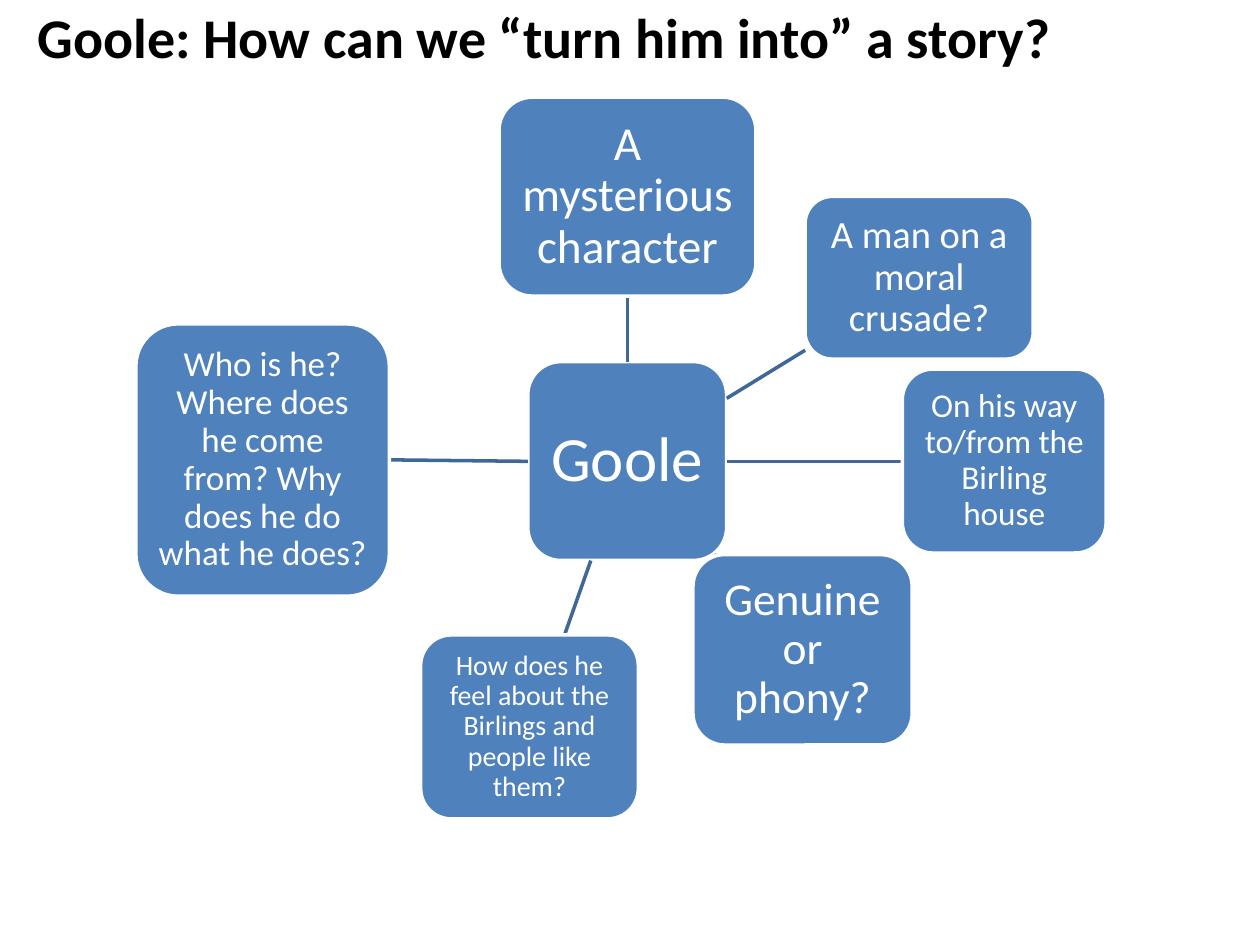
import dataclasses

import pptx
import pptx.dml.color
import pptx.enum.shapes
import pptx.enum.text
import pptx.oxml.ns
import pptx.util
from lxml import etree

Cm = pptx.util.Cm
Pt = pptx.util.Pt


@dataclasses.dataclass(frozen=True)
class Theme:
    font: str = "Calibri"
    ink: str = "000000"
    paper: str = "FFFFFF"
    node: str = "4F81BD"
    link: str = "3F6797"
    line_width: float = 2
    title_size: float = 32
    hub_size: float = 36


THEME = Theme()

TITLE = "Goole: How can we “turn him into” a story?"

# left, top, width, height in centimetres
HUB = ("Goole", (10.64, 7.29, 4.01, 4.01), THEME.hub_size, 0.25)

# text, place, type size, inset, link from the hub to the idea
IDEAS = [
    ("A mysterious character", (10.06, 1.96, 5.18, 4.01), 27, 0.18,
     (12.65, 7.29, 12.65, 5.94)),
    ("A man on a moral crusade?", (16.23, 3.96, 4.6, 3.28), 22, 0.15,
     (14.65, 8.03, 16.23, 7.06)),
    ("Genuine or phony?", (13.97, 11.18, 4.42, 3.84), 26, 0.18,
     (14.53, 11.3, 14.4, 11.18)),
    ("How does he feel about the Birlings and people like them?",
     (8.48, 12.8, 4.39, 3.71), 16, 0.1, (11.91, 11.3, 11.38, 12.8)),
    ("Who is he? Where does he come from? Why does he do what he does?",
     (2.74, 6.53, 5.11, 5.49), 20, 0.15, (10.64, 9.3, 7.85, 9.27)),
    ("On his way to/from the Birling house", (18.19, 7.44, 4.11, 3.71), 19, 0.13,
     (14.65, 9.3, 18.19, 9.3)),
]


def colour(value):
    return pptx.dml.color.RGBColor.from_string(value)


def lengths(values):
    return [Cm(value) for value in values]


def style_line(line, value):
    line.color.rgb = colour(value)
    line.width = Pt(THEME.line_width)


def write(box, text, size, ink, inset, bold=False):
    """Fill the box with one vertically centred paragraph and return it."""
    frame = box.text_frame
    frame.word_wrap = True
    frame.vertical_anchor = pptx.enum.text.MSO_ANCHOR.MIDDLE
    frame.margin_left = frame.margin_right = Cm(inset)
    frame.margin_top = frame.margin_bottom = Cm(inset)
    para = frame.paragraphs[0]
    span = para.add_run()
    span.text = text
    span.font.name = THEME.font
    span.font.size = Pt(size)
    span.font.bold = bold
    span.font.color.rgb = colour(ink)
    return para


def add_title(page):
    box = page.shapes.add_textbox(*lengths((0.51, -0.86, 24.61, 3.18)))
    para = write(box, TITLE, THEME.title_size, THEME.ink, 0.25, bold=True)
    para.alignment = pptx.enum.text.PP_ALIGN.LEFT


def add_node(page, text, place, size, inset):
    box = page.shapes.add_shape(
        pptx.enum.shapes.MSO_SHAPE.ROUNDED_RECTANGLE, *lengths(place))
    box.shadow.inherit = False
    box.fill.solid()
    box.fill.fore_color.rgb = colour(THEME.node)
    style_line(box.line, THEME.paper)
    para = write(box, text, size, THEME.paper, inset)
    para.alignment = pptx.enum.text.PP_ALIGN.CENTER
    para.line_spacing = 0.9


def add_link(page, ends):
    link = page.shapes.add_connector(
        pptx.enum.shapes.MSO_CONNECTOR.STRAIGHT, *lengths(ends))
    style_line(link.line, THEME.link)
    etree.SubElement(link.element.spPr, pptx.oxml.ns.qn("a:effectLst"))


def main():
    deck = pptx.Presentation()
    deck.slide_width, deck.slide_height = lengths((25.4, 19.05))
    page = deck.slides.add_slide(deck.slide_layouts[6])
    add_title(page)
    add_node(page, *HUB)
    for *idea, ends in IDEAS:
        add_link(page, ends)
        add_node(page, *idea)
    deck.save("out.pptx")


if __name__ == "__main__":
    main()
